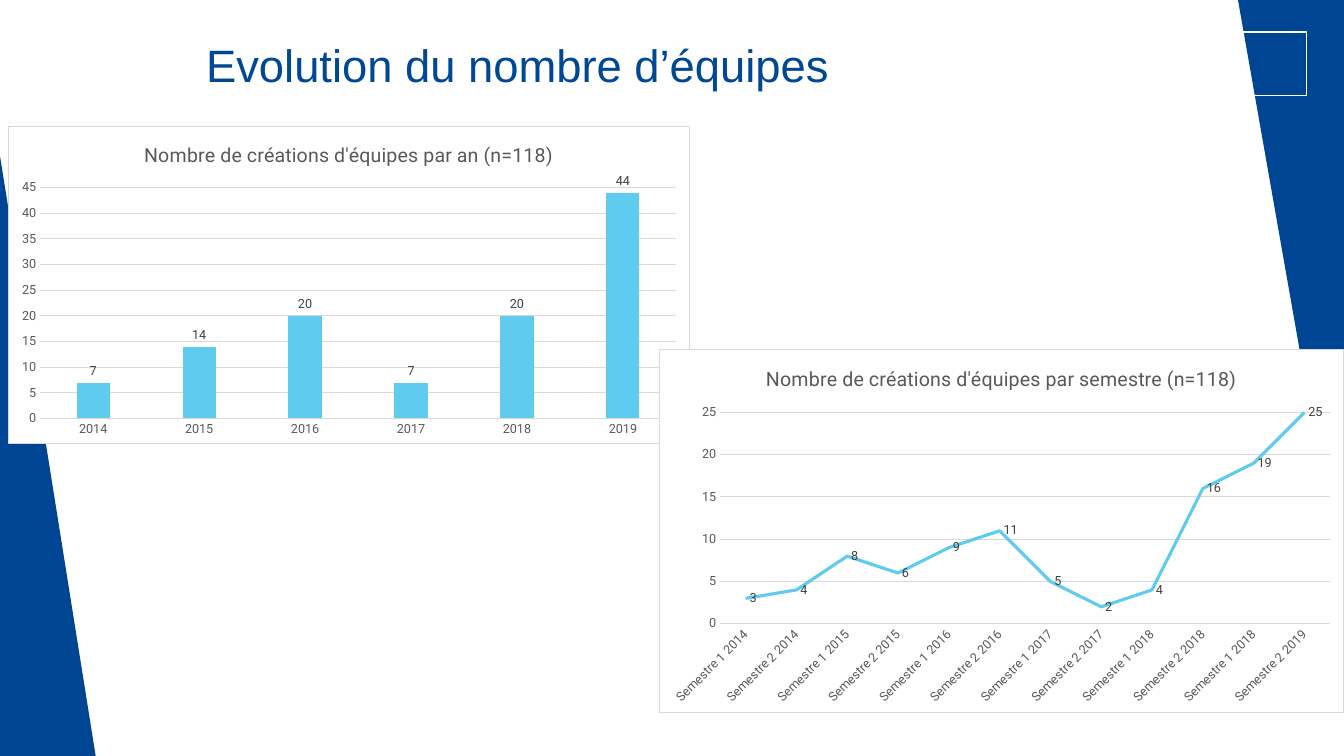
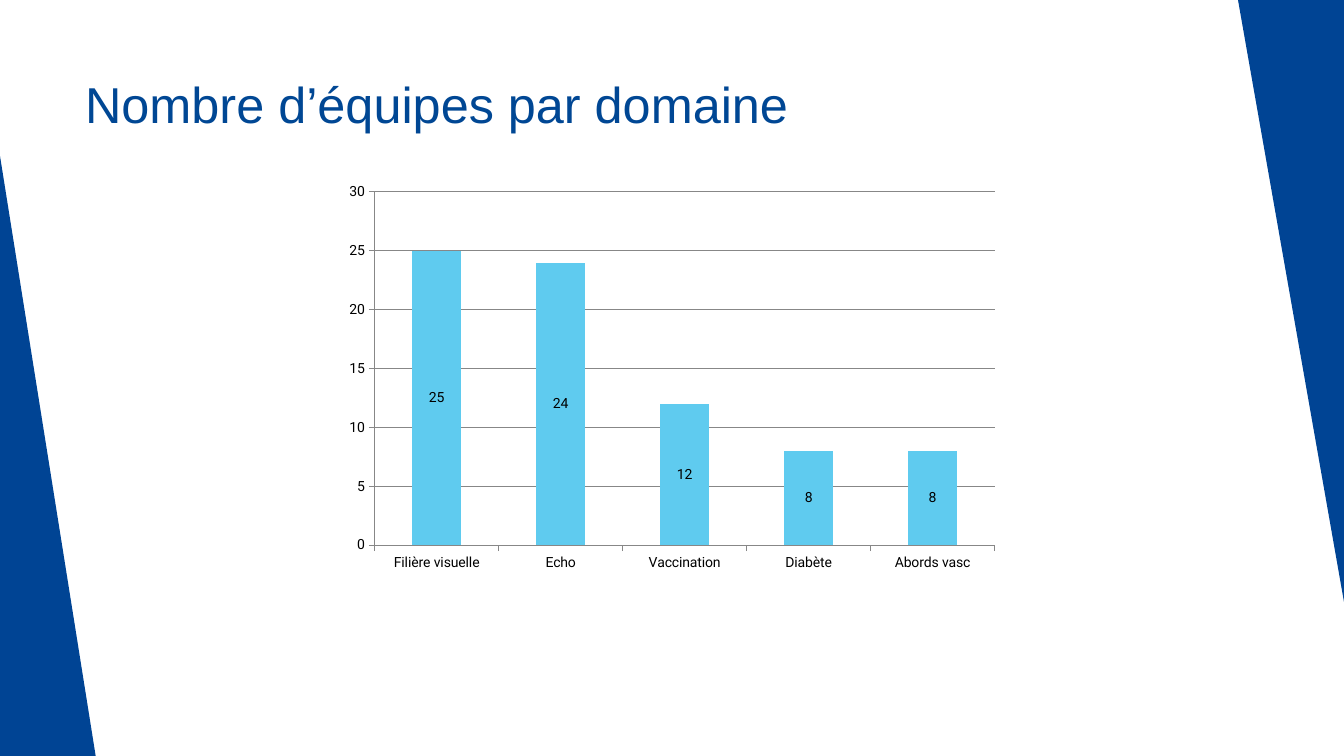
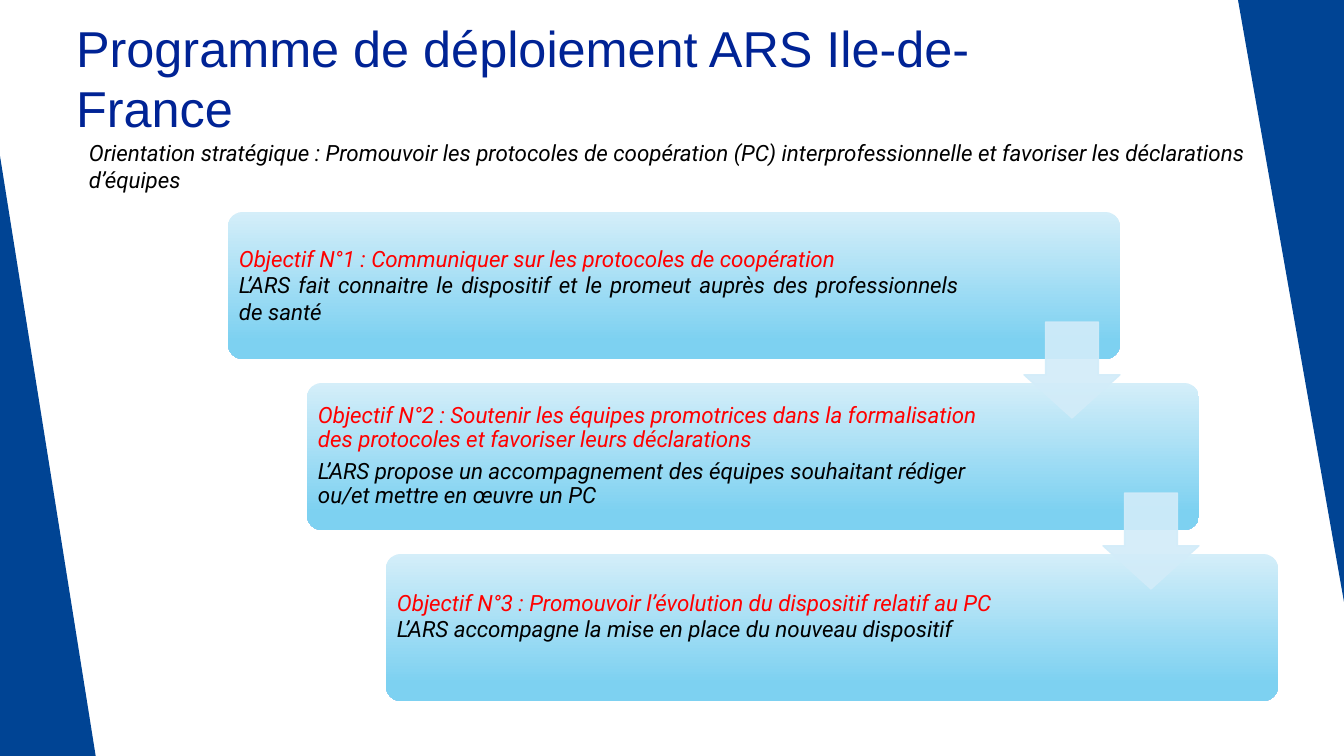
from dataclasses import dataclass

from lxml import etree
from pptx import Presentation
from pptx import util as u
from pptx.chart.data import CategoryChartData
from pptx.dml.color import RGBColor
from pptx.enum import chart as ch, shapes, text
from pptx.oxml import parse_xml
from pptx.oxml.ns import nsdecls, qn

EMU_PER_PX = 12192000 / 1344


@dataclass(frozen=True)
class Theme:
    title_font: str = "Arial"
    body_font: str = "Roboto"
    band: str = "004494"
    title: str = "004794"
    title_alt: str = "002395"
    white: str = "FFFFFF"
    black: str = "000000"
    series: str = "5FCBEF"
    grid: str = "D9D9D9"
    axis: str = "878787"
    chart_text: str = "595959"
    label_text: str = "404040"
    objective: str = "FF0000"
    box_top: str = "D4EEF9"
    box_bottom: str = "7DD1F1"
    arrow: str = "D2ECF9"
    title_size: float = 36
    small_title_size: float = 32.4
    body_size: float = 16
    chart_title_size: float = 14
    chart_size: float = 10
    axis_size: float = 9


T = Theme()


def px(n):
    return u.Emu(round(n * EMU_PER_PX))


def rgb(colour):
    return RGBColor.from_string(colour)


def style_font(font, name, size, colour, italic=None):
    font.name, font.size, font.italic = name, u.Pt(size), italic
    font.color.rgb = rgb(colour)


def style_line(line, colour, width=0.75):
    line.color.rgb = rgb(colour)
    line.width = u.Pt(width)


def set_alpha(sp, percent):
    """Make every plain colour of the shape's fill and line translucent."""
    for clr in sp.element.spPr.iter(qn("a:srgbClr")):
        etree.SubElement(clr, qn("a:alpha")).set("val", str(percent * 1000))


def add_shape(slide, kind, x, y, w, h, adjustments=()):
    sp = slide.shapes.add_shape(kind, px(x), px(y), px(w), px(h))
    sp.shadow.inherit = False
    for i, value in enumerate(adjustments):
        sp.adjustments[i] = value
    return sp


def add_bands(slide, layout):
    """Draw both side triangles and hand them to the shared layout."""
    for x, y, w, angle in ((0, 156, 96, 0), (1238, 0, 106, 180)):
        sp = add_shape(slide, shapes.MSO_SHAPE.RIGHT_TRIANGLE, x, y, w, 602)
        sp.rotation = angle
        sp.fill.solid()
        sp.fill.fore_color.rgb = rgb(T.band)
        sp.line.fill.background()
        layout.shapes.element.append(sp.element)


def set_title(slide, title, x, y, w, h, size=T.title_size, colour=T.title):
    sp = slide.shapes.title
    sp.left, sp.top, sp.width, sp.height = px(x), px(y), px(w), px(h)
    tf = sp.text_frame
    tf.text = title
    tf.auto_size = text.MSO_AUTO_SIZE.NONE
    tf.vertical_anchor = text.MSO_ANCHOR.TOP
    p = tf.paragraphs[0]
    p.alignment = text.PP_ALIGN.LEFT
    style_font(p.runs[0].font, T.title_font, size, colour)
    return sp


def add_text(slide, x, y, w, h, lines):
    """Add an italic text box; lines holds (text, colour) pairs."""
    tf = slide.shapes.add_textbox(px(x), px(y), px(w), px(h)).text_frame
    tf.word_wrap = True
    tf.text = "\n".join(line for line, _ in lines)
    for p, (_, colour) in zip(tf.paragraphs, lines):
        style_font(p.runs[0].font, T.body_font, T.body_size, colour, True)
    return tf


def add_chart(slide, kind, x, y, w, h, categories, values):
    data = CategoryChartData()
    data.categories = categories
    data.add_series("Series 1", values)
    chart = slide.shapes.add_chart(kind, px(x), px(y), px(w), px(h), data).chart
    style_font(chart.font, T.body_font, T.chart_size, T.black)
    chart.has_legend = False
    chart.has_title = False
    plot = chart.plots[0]
    plot.vary_by_categories = False
    plot.has_data_labels = True
    plot.data_labels.show_value = True
    chart.value_axis.minimum_scale = 0
    chart.value_axis.major_unit = 5
    return chart


def style_bars(chart, gap, overlap, position):
    plot = chart.plots[0]
    plot.gap_width, plot.overlap = gap, overlap
    plot.data_labels.position = position
    fill = plot.series[0].format.fill
    fill.solid()
    fill.fore_color.rgb = rgb(T.series)


def style_axes(chart, maximum, tick, grid_colour):
    chart.value_axis.maximum_scale = maximum
    style_line(chart.value_axis.major_gridlines.format.line, grid_colour)
    for axis in (chart.category_axis, chart.value_axis):
        axis.major_tick_mark = tick
        style_line(axis.format.line, grid_colour)


def frame_chart(chart, title, maximum):
    """Give a chart its title, white bordered panel and light axes."""
    chart.has_title = True
    chart.chart_title.include_in_layout = False
    tf = chart.chart_title.text_frame
    tf.text = title
    style_font(tf.paragraphs[0].runs[0].font, T.body_font,
               T.chart_title_size, T.chart_text, False)
    tf.paragraphs[0].runs[0].font.bold = False

    style_axes(chart, maximum, ch.XL_TICK_MARK.NONE, T.grid)
    chart.value_axis.format.line.fill.background()
    for axis in (chart.category_axis, chart.value_axis):
        style_font(axis.tick_labels.font, T.body_font, T.axis_size, T.chart_text)
    style_font(chart.plots[0].data_labels.font, T.body_font, T.axis_size, T.label_text)

    root = chart.element
    if root.find(qn("c:roundedCorners")) is None:
        root.find(qn("c:date1904")).addnext(
            parse_xml(f'<c:roundedCorners {nsdecls("c")} val="0"/>'))
    root.find(qn("c:chart")).addnext(parse_xml(
        f'<c:spPr {nsdecls("c", "a")}>'
        f'<a:solidFill><a:srgbClr val="{T.white}"/></a:solidFill>'
        f'<a:ln w="9525"><a:solidFill><a:srgbClr val="{T.grid}"/></a:solidFill></a:ln>'
        '</c:spPr>'))


def build_growth(slide):
    sp = set_title(slide, "Evolution du nombre d’équipes", 196, 32, 1111, 64,
                   T.small_title_size)
    style_line(sp.line, T.white)

    yearly = add_chart(slide, ch.XL_CHART_TYPE.COLUMN_CLUSTERED, 8, 126, 682, 318,
                       [str(year) for year in range(2014, 2020)],
                       (7, 14, 20, 7, 20, 44))
    style_bars(yearly, 219, -27, ch.XL_LABEL_POSITION.OUTSIDE_END)
    frame_chart(yearly, "Nombre de créations d'équipes par an (n=118)", 45)

    semesters = [f"Semestre {half} {year}"
                 for year in range(2014, 2019) for half in (1, 2)]
    semesters += ["Semestre 1 2018", "Semestre 2 2019"]
    halves = add_chart(slide, ch.XL_CHART_TYPE.LINE, 659, 349, 685, 364, semesters,
                       (3, 4, 8, 6, 9, 11, 5, 2, 4, 16, 19, 25))
    frame_chart(halves, "Nombre de créations d'équipes par semestre (n=118)", 25)
    plot = halves.plots[0]
    plot.data_labels.position = ch.XL_LABEL_POSITION.RIGHT
    plot.series[0].smooth = False
    style_line(plot.series[0].format.line, T.series, 2.25)
    labels = halves.element.find(f'.//{qn("c:catAx")}/{qn("c:txPr")}')
    labels.find(qn("a:bodyPr")).set("rot", "-2700000")


def build_domains(slide):
    set_title(slide, "Nombre d’équipes par domaine", 75, 68, 948, 145)
    chart = add_chart(slide, ch.XL_CHART_TYPE.COLUMN_STACKED, 336, 176, 672, 403,
                      ("Filière visuelle", "Echo", "Vaccination", "Diabète", "Abords vasc"),
                      (25, 24, 12, 8, 8))
    style_bars(chart, 150, 100, ch.XL_LABEL_POSITION.CENTER)
    style_axes(chart, 30, ch.XL_TICK_MARK.OUTSIDE, T.axis)


def add_objective(slide, x, y, text_width, heading, detail):
    box = add_shape(slide, shapes.MSO_SHAPE.ROUNDED_RECTANGLE, x, y, 892, 147, (0.1,))
    box.line.fill.background()
    box.fill.gradient()
    box.fill.gradient_angle = 270
    stops = zip(box.fill.gradient_stops, (T.box_top, T.box_bottom), (0, 0.88))
    for stop, colour, position in stops:
        stop.color.rgb = rgb(colour)
        stop.position = position
    tf = add_text(slide, x + 4, y + 4, text_width, 138,
                  ((heading, T.objective), (detail, T.black)))
    tf.vertical_anchor = text.MSO_ANCHOR.MIDDLE
    tf.margin_left = tf.margin_right = tf.margin_top = tf.margin_bottom = px(7)
    return tf


def add_step_arrow(slide, x, y):
    sp = add_shape(slide, shapes.MSO_SHAPE.DOWN_ARROW, x, y, 96, 96, (0.55, 0.45))
    # Adjustments of a down arrow run from shaft width to head length.
    sp.adjustments[0], sp.adjustments[1] = 0.55, 0.45
    sp.fill.solid()
    sp.fill.fore_color.rgb = rgb(T.arrow)
    style_line(sp.line, T.arrow, 1)
    set_alpha(sp, 90)


def build_programme(slide):
    set_title(slide, "Programme de déploiement ARS Ile-de-France", 66, 12, 948, 145,
              colour=T.title_alt)
    objectives = (
        (734, "Objectif N°1 : Communiquer sur les protocoles de coopération",
         "L’ARS fait connaitre le dispositif et le promeut auprès des professionnels de santé"),
        (710, "Objectif N°2 : Soutenir les équipes promotrices dans la formalisation "
              "des protocoles et favoriser leurs déclarations",
         "L’ARS propose un accompagnement des équipes souhaitant rédiger "
         "ou/et mettre en œuvre un PC"),
        (710, "Objectif N°3 : Promouvoir l’évolution du dispositif relatif au PC",
         "L’ARS accompagne la mise en place du nouveau dispositif"),
    )
    step_x, step_y = 79, 171
    first, second, third = [
        add_objective(slide, 228 + i * step_x, 212 + i * step_y, *objective)
        for i, objective in enumerate(objectives)]
    for p in first.paragraphs:
        p.alignment = text.PP_ALIGN.JUSTIFY
    for p in second.paragraphs:
        p.line_spacing = 0.9
        p.space_after = u.Pt(5.6)
    third.margin_bottom = px(30)

    for i in range(2):
        add_step_arrow(slide, 1024 + i * step_x, 322 + i * step_y)
    add_text(slide, 79, 134, 1207, 88, ((
        "Orientation stratégique : Promouvoir les protocoles de coopération (PC) "
        "interprofessionnelle et favoriser les déclarations d’équipes", T.black),))


def main():
    prs = Presentation()
    prs.slide_width, prs.slide_height = px(1344), px(756)
    layout = prs.slide_layouts[5]
    slides = [prs.slides.add_slide(layout) for _ in range(3)]
    add_bands(slides[0], layout)
    for build, slide in zip((build_growth, build_domains, build_programme), slides):
        build(slide)
    prs.save("out.pptx")


if __name__ == "__main__":
    main()
